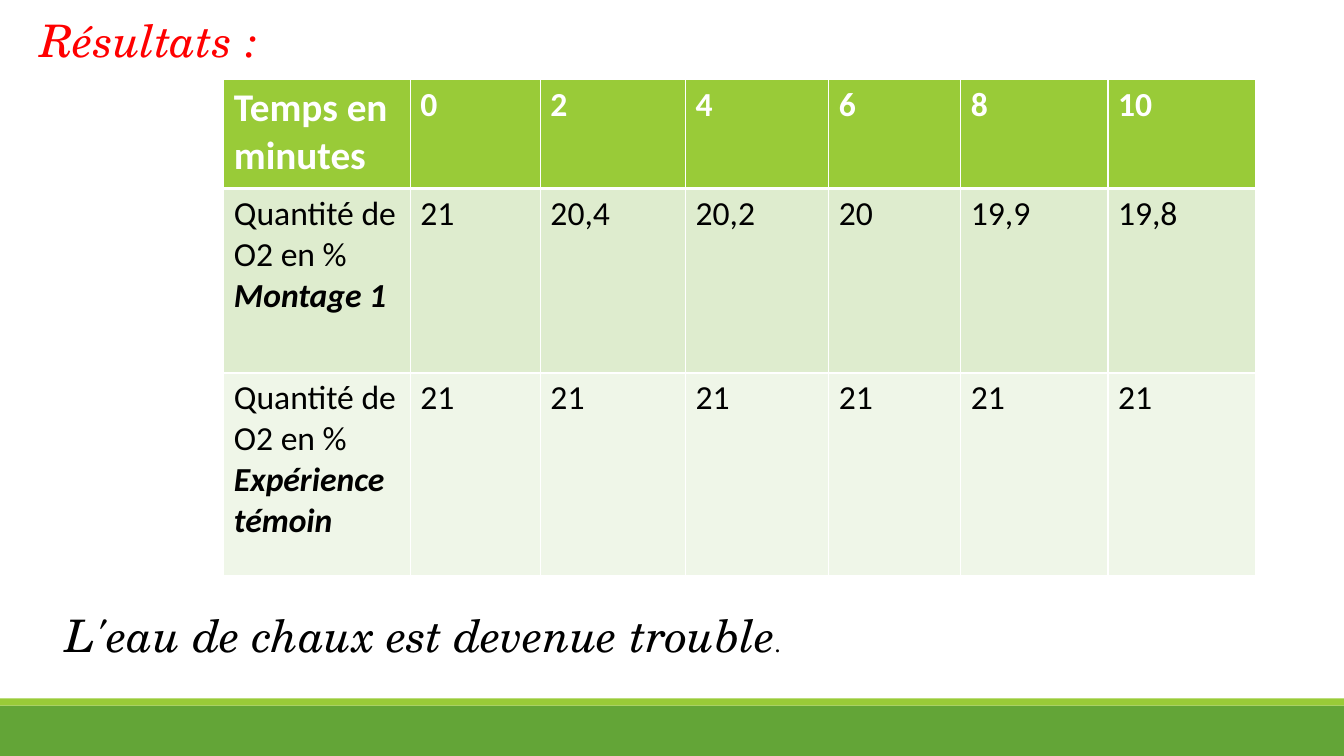
from dataclasses import dataclass

from lxml import etree
from pptx import Presentation
from pptx.dml.color import RGBColor
from pptx.enum.shapes import MSO_SHAPE
from pptx.enum.text import MSO_AUTO_SIZE, PP_ALIGN
from pptx.oxml.ns import qn
from pptx.util import Inches, Pt

RECT = MSO_SHAPE.RECTANGLE
GROW = MSO_AUTO_SIZE.SHAPE_TO_FIT_TEXT
JUSTIFY = PP_ALIGN.JUSTIFY
SERIF = "TeX Gyre Schola"
SANS = "Calibri"
WHITE, BLACK, RED = "FFFFFF", "000000", "FF0000"
LIME, GREEN = "99CB38", "63A537"


@dataclass
class Bar:
    top: float
    height: float
    fill: str


@dataclass
class Note:
    left: float
    top: float
    width: float
    height: float
    text: str
    color: str
    end: str = ""


@dataclass
class Row:
    height: float
    fill: str
    color: str
    label: str
    setup: str
    values: list[str]


BARS = [Bar(7, 0.5, GREEN), Bar(6.93, 0.07, LIME)]
TITLE = Note(0.3, 0.08, 12.77, 0.94, "Résultats :", RED)
REMARK = Note(0.55, 5.98, 13.03, 0.64, "L'eau de chaux est devenue trouble", BLACK, ".")
WIDTHS = [1.85, 1.29, 1.44, 1.42, 1.31, 1.46, 1.46]
OXYGEN = "Quantité de O2 en %"
ROWS = [
    Row(1.08, LIME, WHITE, "Temps en minutes", "", ["0", "2", "4", "6", "8", "10"]),
    Row(1.83, "DEECCE", BLACK, OXYGEN, "Montage 1",
        ["21", "20,4", "20,2", "20", "19,9", "19,8"]),
    Row(2.01, "EFF6E8", BLACK, OXYGEN, "Expérience témoin", ["21"] * 6),
]


def rgb(code: str) -> RGBColor:
    return RGBColor.from_string(code)


def style(font, name: str, size: float, color: str, bold=False, italic=False) -> None:
    font.name, font.size = name, Pt(size)
    font.bold, font.italic = bold, italic
    font.color.rgb = rgb(color)


def draw_bar(slide, bar: Bar) -> None:
    shape = slide.shapes.add_shape(
        RECT, 0, Inches(bar.top), Inches(13.33), Inches(bar.height))
    shape.shadow.inherit = False
    shape.fill.solid()
    shape.fill.fore_color.rgb = rgb(bar.fill)
    shape.line.fill.background()


def draw_note(slide, note: Note) -> None:
    box = slide.shapes.add_textbox(
        Inches(note.left), Inches(note.top), Inches(note.width), Inches(note.height))
    frame = box.text_frame
    frame.word_wrap = True
    frame.auto_size = GROW
    para = frame.paragraphs[0]
    para.alignment = JUSTIFY
    for text, size in ((note.text, 32), (note.end, 18)):
        if text:
            run = para.add_run()
            run.text = text
            style(run.font, SERIF, size, note.color, italic=True)


def add_edges(cell, top: float, bottom: float) -> None:
    """Draw white cell borders; widths are in points."""
    props = cell._tc.get_or_add_tcPr()
    for side, width in (("L", 1), ("R", 1), ("T", top), ("B", bottom)):
        line = etree.SubElement(props, qn(f"a:ln{side}"), w=str(Pt(width)))
        fill = etree.SubElement(line, qn("a:solidFill"))
        etree.SubElement(fill, qn("a:srgbClr"), val=WHITE)


def draw_table(slide, rows: list[Row]) -> None:
    table = slide.shapes.add_table(
        len(rows), len(WIDTHS), Inches(2.22), Inches(0.79),
        Inches(sum(WIDTHS)), Inches(sum(row.height for row in rows))).table
    for col, width in zip(table.columns, WIDTHS):
        col.width = Inches(width)
    for r, row in enumerate(rows):
        table.rows[r].height = Inches(row.height)
        head = r == 0
        for c, text in enumerate([row.label, *row.values]):
            cell = table.cell(r, c)
            add_edges(cell, 3 if r == 1 else 1, 3 if head else 1)
            cell.fill.solid()
            cell.fill.fore_color.rgb = rgb(row.fill)
            cell.text = text
            size = 28 if head and c == 0 else 24
            style(cell.text_frame.paragraphs[0].font, SANS, size, row.color, bold=head)
            if c == 0 and row.setup:
                para = cell.text_frame.add_paragraph()
                para.text = row.setup
                style(para.font, SANS, 24, row.color, bold=True, italic=True)


def main() -> None:
    deck = Presentation()
    deck.slide_width, deck.slide_height = Inches(13.33), Inches(7.5)
    slide = deck.slides.add_slide(deck.slide_layouts[6])
    for bar in BARS:
        draw_bar(slide, bar)
    draw_note(slide, TITLE)
    draw_table(slide, ROWS)
    draw_note(slide, REMARK)
    deck.save("out.pptx")


if __name__ == "__main__":
    main()
